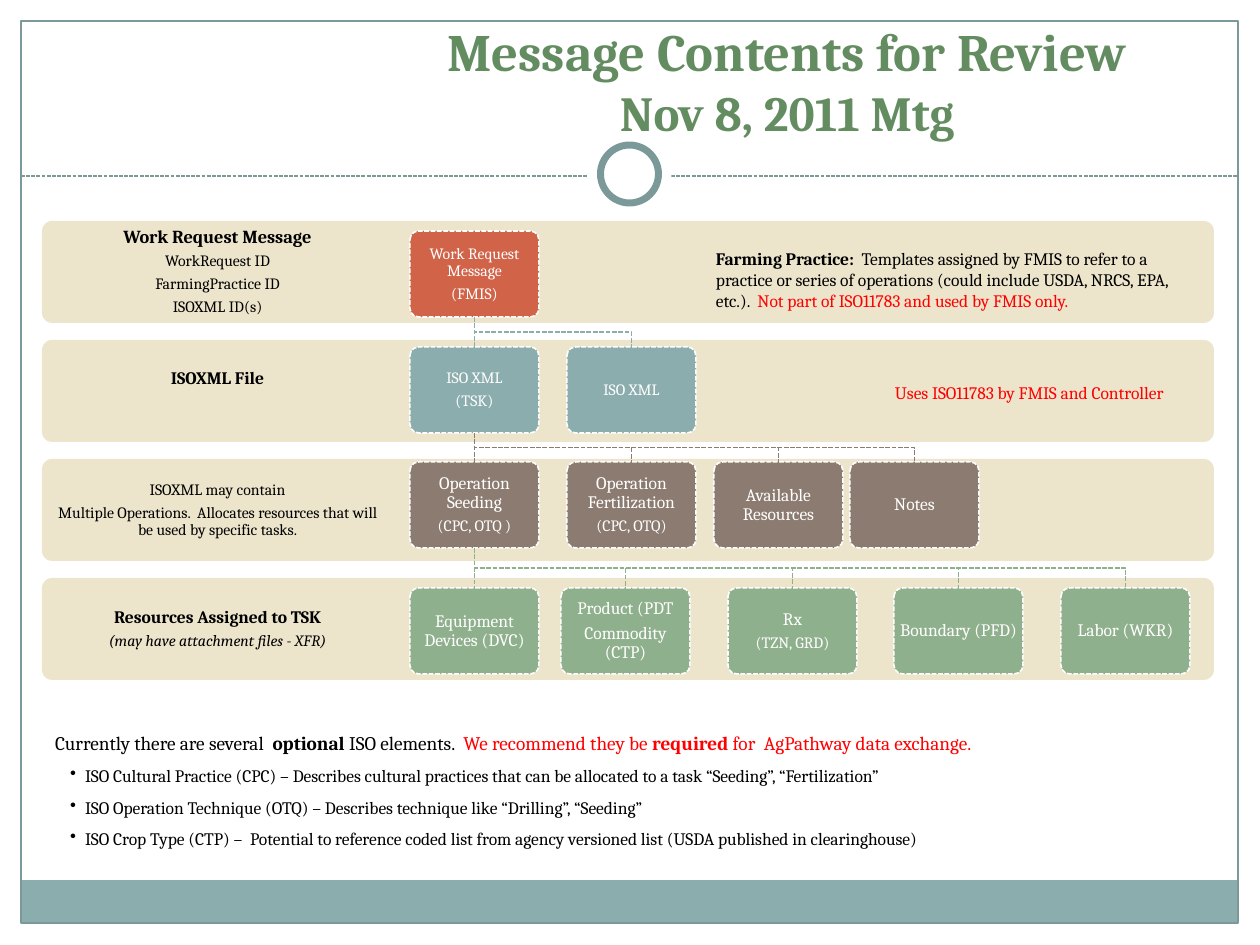
from dataclasses import dataclass
from lxml.etree import SubElement
from pptx import Presentation
from pptx.dml.color import RGBColor
from pptx.enum.dml import MSO_LINE
from pptx.enum.shapes import MSO_CONNECTOR, MSO_SHAPE
from pptx.enum.text import MSO_ANCHOR, PP_ALIGN
from pptx.oxml.ns import qn
from pptx.util import Pt

SCALE = 914400 / 126


@dataclass(frozen=True)
class Theme:
    font: str = "Cambria"
    ink: str = "000000"
    white: str = "FFFFFF"
    red: str = "FF0000"
    title: str = "648C61"
    edge: str = "7C999A"
    sand: str = "ECE5CC"
    rust: str = "D16349"
    teal: str = "8CADAE"
    brown: str = "8C7B70"
    green: str = "8FB08C"
    huge: float = 30
    large: float = 28
    lead: float = 11
    head: float = 10.5
    body: float = 10
    small: float = 9
    dash: float = 0.9


T = Theme()


def px(n):
    return round(n * SCALE)


def hue(code):
    return RGBColor.from_string(code)


def stroke(line, color, width, dash=False):
    line.color.rgb = hue(color)
    line.width = Pt(width)
    if dash:
        line.dash_style = MSO_LINE.SQUARE_DOT


def shape(slide, kind, box, fill=None, line=None, width=0.75, dash=False):
    item = slide.shapes.add_shape(kind, *map(px, box))
    item.shadow.inherit = False
    if kind == MSO_SHAPE.ROUNDED_RECTANGLE:
        item.adjustments[0] = 0.1
    if fill:
        item.fill.solid()
        item.fill.fore_color.rgb = hue(fill)
    else:
        item.fill.background()
    if line:
        stroke(item.line, line, width, dash)
    else:
        item.line.fill.background()
    return item


def rule(slide, start, end, color, width):
    item = slide.shapes.add_connector(
        MSO_CONNECTOR.STRAIGHT, *map(px, start + end))
    stroke(item.line, color, width, True)
    SubElement(item._element.spPr, qn("a:effectLst"))


def elbow(slide, start, end, color):
    (x, y), (right, low) = start, end
    mid = (y + low) / 2
    path = slide.shapes.build_freeform(px(x), px(y))
    path.add_line_segments(
        [(px(a), px(b)) for a, b in ((x, mid), (right, mid), end)], close=False)
    item = path.convert_to_shape()
    item.shadow.inherit = False
    item.fill.background()
    stroke(item.line, color, T.dash, True)


def write(item, paras, size=T.body, color=T.ink, bold=False, align=PP_ALIGN.LEFT,
          anchor=MSO_ANCHOR.TOP, inset=(13, 6), space=None, gap=0, bullet=False):
    frame = item.text_frame
    frame.word_wrap = True
    frame.vertical_anchor = anchor
    frame.margin_left = frame.margin_right = px(inset[0])
    frame.margin_top = frame.margin_bottom = px(inset[1])
    for n, runs in enumerate(paras):
        para = frame.add_paragraph() if n else frame.paragraphs[0]
        para.alignment = align
        if space:
            para.line_spacing = space
        if gap:
            para.space_after = Pt(gap)
        if bullet and n:
            props = para._p.get_or_add_pPr()
            props.set("marL", str(px(30)))
            props.set("indent", str(px(-15)))
            SubElement(props, qn("a:buChar")).set("char", "•")
        for run in [runs] if isinstance(runs, (str, tuple)) else runs:
            words, style = (run, {}) if isinstance(run, str) else run
            if words == "\n":
                para.add_line_break()
                continue
            part = para.add_run()
            part.text = words
            font = part.font
            font.name = T.font
            font.size = Pt(style.get("size", size))
            font.bold = style.get("bold", bold)
            font.italic = style.get("italic", False)
            font.color.rgb = hue(style.get("color", color))


def label(slide, box, paras, **form):
    write(slide.shapes.add_textbox(*map(px, box)), paras, **form)


def centred(**form):
    return dict(align=PP_ALIGN.CENTER, anchor=MSO_ANCHOR.MIDDLE,
                space=0.9, gap=3.4, **form)


def border(slide, box):
    x, y, w, h = box
    shape(slide, MSO_SHAPE.RECTANGLE, (x, y + h - 43, w, 43), T.teal)
    shape(slide, MSO_SHAPE.RECTANGLE, box, line=T.edge)
    rule(slide, (x, y + 155), (x + w, y + 155), T.edge, 0.75)
    mid = x + w / 2
    shape(slide, MSO_SHAPE.OVAL, (mid - 42, y + 111, 84, 84), T.white)
    shape(slide, MSO_SHAPE.OVAL, (mid - 29, y + 124, 58, 58), T.white, T.edge, 4)


def header(slide, box):
    runs = ["Message Contents for Review", ("\n", {}),
            ("Nov 8, 2011 Mtg", dict(size=T.large))]
    label(slide, box, [runs], size=T.huge, color=T.title, bold=True,
          align=PP_ALIGN.CENTER, anchor=MSO_ANCHOR.BOTTOM)


def band(slide, box, paras, lift=0):
    x, y, w, h = box
    shape(slide, MSO_SHAPE.ROUNDED_RECTANGLE, box, T.sand)
    label(slide, (x, y, 351, h - lift), paras, **centred(size=T.small, inset=(9, 9)))


def bands(slide, box):
    x, y, w, h = box
    strong = dict(size=T.body, bold=True)
    rows = [
        ([("Work Request Message", dict(size=T.head, bold=True)),
          "WorkRequest ID", "FarmingPractice ID", "ISOXML ID(s)"], 0),
        ([("ISOXML File", strong)], 24),
        (["ISOXML may contain",
          "Multiple Operations.  Allocates resources that will be used by specific tasks."], 0),
        ([("Resources Assigned to TSK", strong),
          ("(may have attachment files - XFR)", dict(italic=True))], 0),
    ]
    step = (h - 102) / (len(rows) - 1)
    for n, (paras, lift) in enumerate(rows):
        band(slide, (x, y + n * step, w, 102), paras, lift)


def tree(slide, box):
    left, top = box[:2]
    wide, high = 129, 86
    small = dict(size=T.small)
    rows = [
        (10, T.rust, [(368, [("Work Request Message", small), ("(FMIS)", small)])]),
        (126, T.teal, [(368, [("ISO XML", small), ("(TSK)", small)]),
                       (525, [("ISO XML", small)])]),
        (241, T.brown, [(368, ["Operation Seeding", ("(CPC, OTQ )", small)]),
                        (525, ["Operation Fertilization", ("(CPC, OTQ)", small)]),
                        (672, ["Available Resources"]),
                        (808, ["Notes"])]),
        (367, T.green, [(368, ["Equipment Devices (DVC)"]),
                        (519, ["Product (PDT", "Commodity (CTP)"]),
                        (686, ["Rx", ("(TZN, GRD)", small)]),
                        (852, ["Boundary (PFD)"]),
                        (1019, ["Labor (WKR)"])]),
    ]
    root = None
    for drop, color, tiles in rows:
        y = top + drop
        for dx, paras in tiles:
            x = left + dx
            tip = (x + wide / 2, y)
            if root and tip[0] == root[0]:
                rule(slide, root, tip, color, T.dash)
            elif root:
                elbow(slide, root, tip, color)
            tile = shape(slide, MSO_SHAPE.ROUNDED_RECTANGLE, (x, y, wide, high),
                         color, T.white, T.dash, True)
            write(tile, paras, **centred(color=T.white, inset=(2, 2)))
        root = (left + tiles[0][0] + wide / 2, y + high)


def remarks(slide, box):
    x, y = box[:2]
    label(slide, (x + 661, y + 21, 504, 97), [[
        ("Farming Practice:  ", dict(bold=True)),
        "Templates assigned by FMIS to refer to a practice or series of operations "
        "(could include USDA, NRCS, EPA, etc.).  ",
        ("Not part of ISO11783 and used by FMIS only.", dict(color=T.red))]])
    label(slide, (x + 840, y + 155, 347, 55),
          ["Uses ISO11783 by FMIS and Controller"], color=T.red)


def notes(slide, box):
    lead = dict(size=T.lead)
    red = dict(size=T.lead, color=T.red)
    label(slide, box, [
        [("Currently there are several  ", lead), ("optional ", dict(lead, bold=True)),
         ("ISO elements.  ", lead), ("We recommend they be ", red),
         ("required", dict(red, bold=True)), (" for  AgPathway data exchange.", red)],
        "ISO Cultural Practice (CPC) – Describes cultural practices that can be "
        "allocated to a task “Seeding”, “Fertilization”",
        "ISO Operation Technique (OTQ) – Describes technique like “Drilling”, “Seeding”",
        "ISO Crop Type (CTP) –  Potential to reference coded list from agency "
        "versioned list (USDA published in clearinghouse)",
    ], space=1.5, bullet=True)


def main():
    deck = Presentation()
    deck.slide_width, deck.slide_height = px(1260), px(945)
    slide = deck.slides.add_slide(deck.slide_layouts[6])
    chart = (42, 221, 1172, 459)
    border(slide, (21, 21, 1217, 902))
    bands(slide, chart)
    tree(slide, chart)
    remarks(slide, chart)
    notes(slide, (42, 714, 1155, 194))
    header(slide, (357, 43, 860, 104))
    deck.save("out.pptx")


if __name__ == "__main__":
    main()
